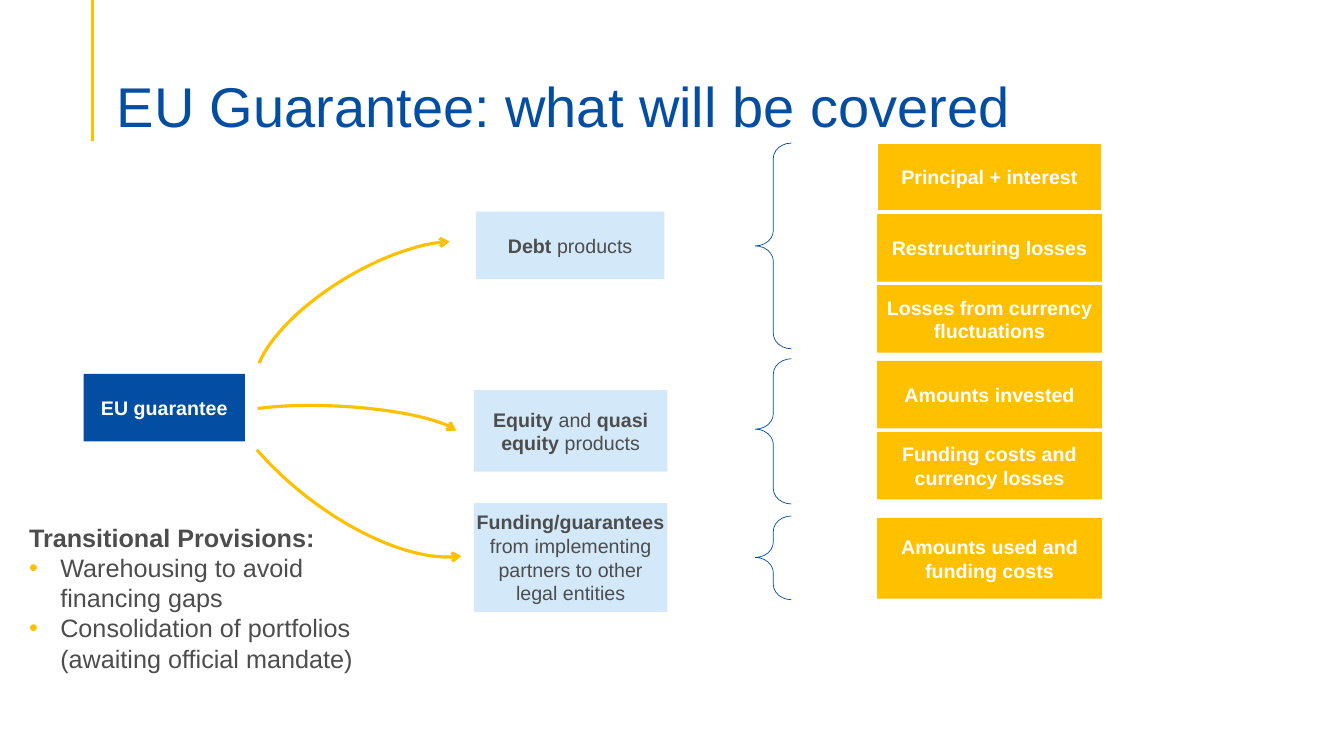
from lxml import etree
from pptx import Presentation
from pptx.dml.color import RGBColor
from pptx.enum.shapes import MSO_CONNECTOR, MSO_SHAPE
from pptx.enum.text import MSO_ANCHOR, MSO_AUTO_SIZE, PP_ALIGN
from pptx.oxml.ns import qn
from pptx.util import Inches, Pt

RECTANGLE, BRACE, ARC = MSO_SHAPE.RECTANGLE, MSO_SHAPE.LEFT_BRACE, MSO_SHAPE.ARC
STRAIGHT = MSO_CONNECTOR.STRAIGHT
MIDDLE, BOTTOM = MSO_ANCHOR.MIDDLE, MSO_ANCHOR.BOTTOM
GROW, CENTER = MSO_AUTO_SIZE.SHAPE_TO_FIT_TEXT, PP_ALIGN.CENTER

BLUE, PALE, YELLOW, GREY, WHITE = "034EA2", "D3E8F9", "FFC000", "4D4D4D", "FFFFFF"
CELL = Inches(0.1)
ROW_HEIGHT, ROW_PITCH = 6.7, 7.05
OUTCOME_LEFT, OUTCOME_WIDTH = 87, 22.3
BRACE_LEFT, BRACE_WIDTH = 74.9, 3.6


def paint(target, hex_color):
    if hasattr(target, "solid"):
        target.solid()
        target.fore_color.rgb = RGBColor.from_string(hex_color)
    else:
        target.color.rgb = RGBColor.from_string(hex_color)


def add_block(area, fill, ink, pieces):
    block = slide.shapes.add_shape(RECTANGLE, *[int(n * CELL) for n in area])
    block.shadow.inherit = False
    paint(block.fill, fill)
    block.line.fill.background()
    frame = block.text_frame
    frame.word_wrap = True
    frame.vertical_anchor = MIDDLE
    frame.margin_left = frame.margin_right = Inches(0.02)
    frame.margin_top = frame.margin_bottom = Inches(0.02)
    paragraph = frame.paragraphs[0]
    paragraph.alignment = CENTER
    for wording, bold in pieces:
        run = paragraph.add_run()
        run.text = wording
        run.font.name, run.font.size, run.font.bold = "Arial", Pt(14), bold
        paint(run.font, ink)
    return block


deck = Presentation()
deck.slide_width, deck.slide_height = Inches(13.33), Inches(7.5)
slide = deck.slides.add_slide(deck.slide_layouts[6])

accent = slide.shapes.add_connector(STRAIGHT, int(9.2 * CELL), 0, int(9.2 * CELL), 14 * CELL)
paint(accent.line, YELLOW)
accent.line.width = Pt(2.25)
etree.SubElement(accent._element.spPr, qn("a:effectLst"))

title = slide.shapes.add_textbox(*[int(n * CELL) for n in (10.6, 5.3, 115, 8.6)]).text_frame
title.word_wrap = True
title.vertical_anchor = BOTTOM
title.margin_bottom = 0
title.text = "EU Guarantee: what will be covered"
heading = title.paragraphs[0]
heading.line_spacing = 0.9
heading.font.name, heading.font.size = "Arial", Pt(40)
paint(heading.font, BLUE)

add_block((8.3, 37.1, 16, ROW_HEIGHT), BLUE, WHITE, [("EU guarantee", True)])

coverage = [
    ((47.2, 21, 18.7, ROW_HEIGHT), [("Debt ", True), ("products", False)],
     (14.2, 20.4, 0.5), 14.2, ROW_HEIGHT,
     ["Principal + interest", "Restructuring losses", "Losses from currency fluctuations"]),
    ((47, 38.7, 19.2, 8.1),
     [("Equity ", True), ("and", False), (" quasi equity ", True), ("products", False)],
     (35.6, 14.4, 0.485), 35.8, ROW_HEIGHT,
     ["Amounts invested", "Funding costs and currency losses"]),
    ((47, 49.9, 19.2, 10.8),
     [("Funding/guarantees ", True),
      ("from implementing partners to other legal entities", False)],
     (51.2, 8.3, 0.495), 51.4, 8,
     ["Amounts used and funding costs"]),
]
for product_area, product, (brace_top, brace_height, tip), top, height, outcomes in coverage:
    add_block(product_area, PALE, GREY, product)
    for row, outcome in enumerate(outcomes):
        area = (OUTCOME_LEFT, top + row * ROW_PITCH, OUTCOME_WIDTH, height)
        outcome_block = add_block(area, YELLOW, WHITE, [(outcome, True)])
        if outcome == "Principal + interest":
            paint(outcome_block.line, WHITE)
            outcome_block.line.width = Pt(1.5)
    brace_area = (BRACE_LEFT, brace_top, BRACE_WIDTH, brace_height)
    brace = slide.shapes.add_shape(BRACE, *[int(n * CELL) for n in brace_area])
    brace.shadow.inherit = False
    brace.adjustments[0], brace.adjustments[1] = 0.424, tip
    brace.fill.background()
    paint(brace.line, BLUE)
    brace.line.width = Pt(0.5)

DEGREE = 0.6
arrows = [
    ((23.7, 26.8, 26.9, 11.1), 329.1, 193.12, 342.51, False),
    ((21.5, 40.3, 24.3, 5.1), 3.1, 192.89, 356.26, False),
    ((18, 34.9, 34.5, 16), 218.1, 228.04, 348.74, True),
]
for area, turn, start, end, mirrored in arrows:
    arrow = slide.shapes.add_shape(ARC, *[int(n * CELL) for n in area])
    arrow.shadow.inherit = False
    arrow.adjustments[0], arrow.adjustments[1] = start * DEGREE, end * DEGREE
    arrow.rotation = turn
    if mirrored:
        arrow._element.spPr.find(qn("a:xfrm")).set("flipH", "1")
    arrow.fill.background()
    paint(arrow.line, YELLOW)
    arrow.line.width = Pt(2.25)
    etree.SubElement(arrow._element.spPr.find(qn("a:ln")), qn("a:tailEnd"), type="arrow")

provision_area = (1.9, 51.3, 38.3, 16.2)
provisions = slide.shapes.add_textbox(*[int(n * CELL) for n in provision_area]).text_frame
provisions.word_wrap = True
provisions.auto_size = GROW
provisions.text = "\n".join([
    "Transitional Provisions:",
    "Warehousing to avoid financing gaps",
    "Consolidation of portfolios (awaiting official mandate)",
])
for index, provision in enumerate(provisions.paragraphs):
    if index:
        properties = provision._p.get_or_add_pPr()
        properties.set("marL", str(Inches(0.31)))
        properties.set("indent", str(-Inches(0.31)))
        bullet_color = etree.SubElement(properties, qn("a:buClr"))
        etree.SubElement(bullet_color, qn("a:srgbClr"), val=YELLOW)
        etree.SubElement(properties, qn("a:buFont"), typeface="Arial")
        etree.SubElement(properties, qn("a:buChar"), char="•")
    provision.font.name, provision.font.size = "Arial", Pt(18)
    provision.font.bold = index == 0
    paint(provision.font, GREY)

deck.save("out.pptx")
